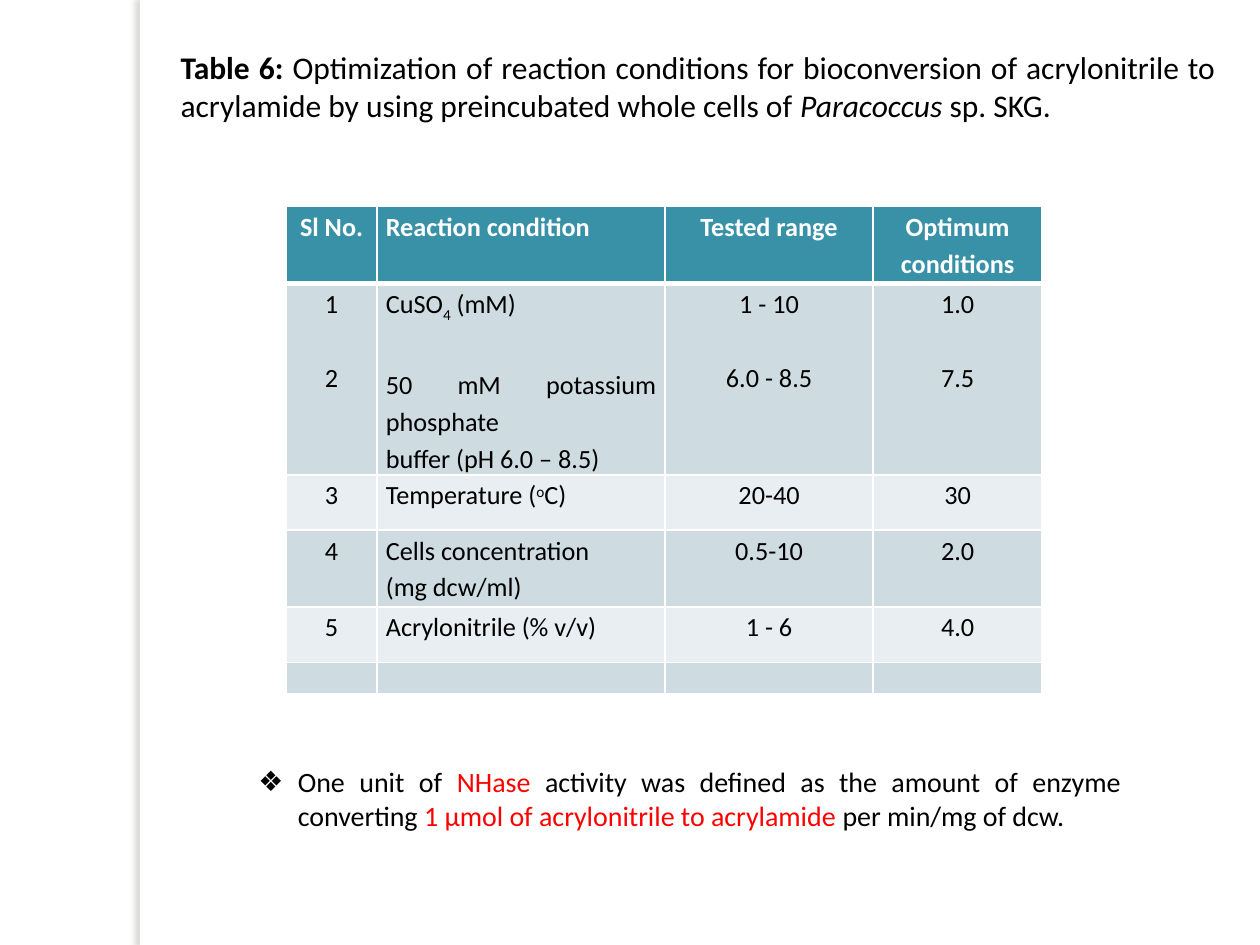
from lxml.etree import SubElement
from pptx import Presentation
from pptx.dml.color import RGBColor
from pptx.enum.shapes import MSO_SHAPE as Shape
from pptx.enum.text import MSO_ANCHOR as Anchor, MSO_AUTO_SIZE as AutoSize, PP_ALIGN as Align
from pptx.oxml.ns import qn
from pptx.util import Pt

FONT = "Calibri"
BLACK, WHITE, RED = "000000", "FFFFFF", "FF0000"
HEADER, DARK_BAND, LIGHT_BAND = "3891A7", "CEDCE1", "E8EEF1"

# Content: each run is (text, font settings)
TITLE = [
    ("Table 6: ", {"bold": True}),
    ("Optimization of reaction conditions for bioconversion of acrylonitrile to "
     "acrylamide by using preincubated whole cells of ", {}),
    ("Paracoccus", {"italic": True}),
    (" sp. SKG.", {}),
]
NOTE = [
    ("One unit of ", {}),
    ("NHase", {"color": RED}),
    (" activity was defined as the amount of enzyme converting ", {}),
    ("1 μmol of acrylonitrile to acrylamide ", {"color": RED}),
    ("per min/mg of dcw.", {}),
]
COPPER = [("CuSO", {}), ("4", {"baseline": -25000}), (" (mM)", {})]
TEMPERATURE = [("Temperature (", {}), ("ο", {"baseline": 30000}), ("C)", {})]

# Each cell is a list of paragraphs; a paragraph is a string or a list of runs
ROWS = [
    [["Sl No."], ["Reaction condition"], ["Tested range"], ["Optimum conditions"]],
    [["1", "2"], [COPPER, "50 mM potassium phosphate ", "buffer (pH 6.0 – 8.5)"],
     ["1 - 10", "6.0 - 8.5"], ["1.0", "7.5"]],
    [["3"], [TEMPERATURE], ["20-40"], ["30"]],
    [["4"], ["Cells concentration ", "(mg dcw/ml)"], ["0.5-10"], ["2.0"]],
    [["5"], ["Acrylonitrile (% v/v)"], ["1 - 6"], ["4.0"]],
    [[], [], [], []],
]
COLUMN_WIDTHS = [52, 164.5, 119, 96.5]
ROW_HEIGHTS = [44, 109.5, 31.5, 44, 31.5, 16]
CONDITION_COLUMN, GAP_ROW = 1, 1


def rgb(value):
    return RGBColor.from_string(value)


def add_runs(para, runs, size, color=BLACK, bold=False):
    for text, style in runs:
        span = para.add_run()
        span.text = text
        font = span.font
        font.name, font.size = FONT, Pt(size)
        font.bold = style.get("bold", bold)
        font.italic = style.get("italic", False)
        font.color.rgb = rgb(style.get("color", color))
        if "baseline" in style:
            span._r.get_or_add_rPr().set("baseline", str(style["baseline"]))


def fill_placeholder(box, place, runs, size):
    box.left, box.top, box.width, box.height = map(Pt, place)
    frame = box.text_frame
    frame.word_wrap = True
    frame.auto_size = AutoSize.SHAPE_TO_FIT_TEXT
    frame.vertical_anchor = Anchor.TOP
    para = frame.paragraphs[0]
    para.alignment = Align.JUSTIFY
    para.space_before = Pt(0)
    add_runs(para, runs, size)
    return para


def set_borders(cell, top, bottom):
    properties = cell._tc.get_or_add_tcPr()
    for side, width in (("L", 1), ("R", 1), ("T", top), ("B", bottom)):
        line = SubElement(properties, qn(f"a:ln{side}"), w=str(Pt(width)))
        paint = SubElement(line, qn("a:solidFill"))
        SubElement(paint, qn("a:srgbClr"), val=WHITE)


def fill_cell(cell, paragraphs, row, column):
    is_header = row == 0
    set_borders(cell, 3 if row == 1 else 1, 3 if is_header else 1)
    cell.fill.solid()
    band = DARK_BAND if row % 2 else LIGHT_BAND
    cell.fill.fore_color.rgb = rgb(HEADER if is_header else band)
    cell.margin_left = cell.margin_right = Pt(5)
    cell.margin_top = cell.margin_bottom = Pt(0)
    frame = cell.text_frame
    if not paragraphs:
        SubElement(frame.paragraphs[0]._p, qn("a:endParaRPr"), sz="1500")
    for index, content in enumerate(paragraphs):
        para = frame.add_paragraph() if index else frame.paragraphs[0]
        para.line_spacing = 1.15
        if column != CONDITION_COLUMN:
            para.alignment = Align.CENTER
        else:
            para.alignment = Align.LEFT if is_header else Align.JUSTIFY
        if row == GAP_ROW and index == 1:
            para.space_before = Pt(23 if column == CONDITION_COLUMN else 21)
        runs = [(content, {})] if isinstance(content, str) else content
        add_runs(para, runs, 15, WHITE if is_header else BLACK, is_header)


deck = Presentation()
deck.slide_width, deck.slide_height = Pt(720), Pt(540)
slide = deck.slides.add_slide(deck.slide_layouts[1])

# Vertical strip with a soft shadow to its left
strip = slide.shapes.add_shape(Shape.RECTANGLE, Pt(80), Pt(0), Pt(5.5), Pt(540))
strip.fill.solid()
strip.fill.fore_color.rgb = rgb(WHITE)
strip.line.fill.background()
strip.shadow.inherit = False
effects = strip._element.spPr.find(qn("a:effectLst"))
shadow = SubElement(effects, qn("a:outerShdw"), blurRad=str(Pt(3)), dist=str(Pt(3)),
                    dir="10800000", algn="tl", rotWithShape="0")
tint = SubElement(shadow, qn("a:srgbClr"), val="736F63")
SubElement(tint, qn("a:alpha"), val="25000")

# Title and note
title, note = slide.placeholders
fill_placeholder(title, (96, 24, 606, 51), TITLE, 18)
note_para = fill_placeholder(note, (140.5, 433.5, 507.5, 46), NOTE, 16)
note_properties = note_para._p.get_or_add_pPr()
note_properties.set("marL", str(Pt(22.5)))
note_properties.set("indent", str(Pt(-22.5)))
SubElement(note_properties, qn("a:buChar"), char="❖")

# Table of reaction conditions
table = slide.shapes.add_table(len(ROWS), len(COLUMN_WIDTHS), Pt(163.5), Pt(118),
                               Pt(sum(COLUMN_WIDTHS)), Pt(sum(ROW_HEIGHTS))).table
for column, width in zip(table.columns, COLUMN_WIDTHS):
    column.width = Pt(width)
for r, (height, cells) in enumerate(zip(ROW_HEIGHTS, ROWS)):
    table.rows[r].height = Pt(height)
    for c, paragraphs in enumerate(cells):
        fill_cell(table.cell(r, c), paragraphs, r, c)

deck.save("out.pptx")
